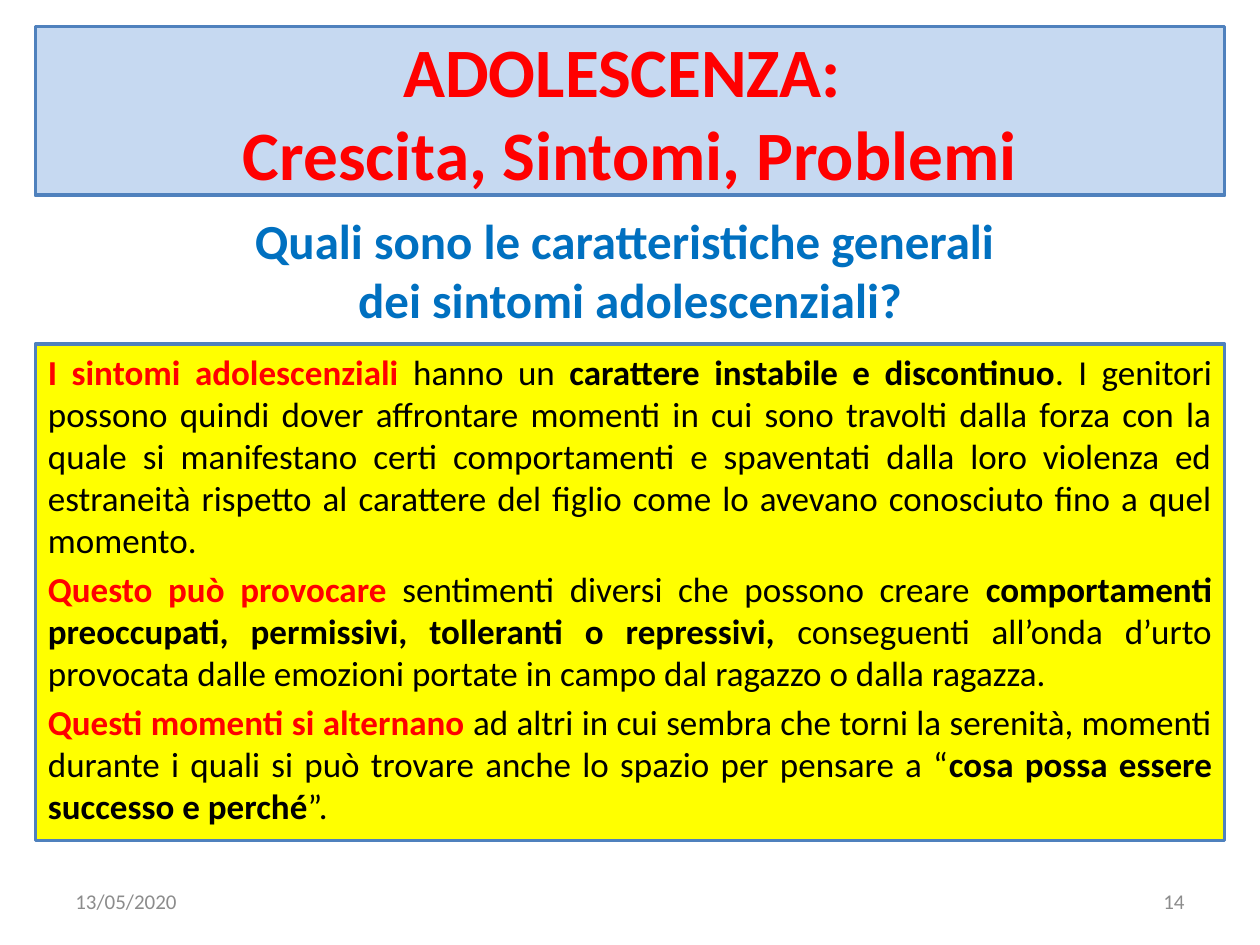
from pptx import Presentation
from pptx.dml.color import RGBColor
from pptx.enum.text import MSO_ANCHOR, MSO_AUTO_SIZE, PP_ALIGN
from pptx.util import Inches, Pt

LEFT, CENTER, RIGHT, JUSTIFY = PP_ALIGN.LEFT, PP_ALIGN.CENTER, PP_ALIGN.RIGHT, PP_ALIGN.JUSTIFY
TOP, MIDDLE = MSO_ANCHOR.TOP, MSO_ANCHOR.MIDDLE

# Content: each paragraph is a list of (style, text) runs
TITLE = [[("title", "ADOLESCENZA: \vCrescita, Sintomi, Problemi")]]
QUESTION = [
    [("question", "Quali sono le caratteristiche generali ")],
    [("question", "dei sintomi adolescenziali?")],
]
ANSWER = [
    [("lead", "I sintomi adolescenziali "),
     ("plain", "hanno un "),
     ("strong", "carattere instabile e discontinuo"),
     ("plain", ". I genitori possono quindi dover affrontare momenti in cui sono travolti "
               "dalla forza con la quale si manifestano certi comportamenti e spaventati "
               "dalla loro violenza ed estraneità rispetto al carattere del figlio come lo "
               "avevano conosciuto fino a quel momento. ")],
    [("lead", "Questo può provocare "),
     ("plain", "sentimenti diversi che possono creare "),
     ("strong", "comportamenti preoccupati, permissivi, tolleranti o repressivi,"),
     ("plain", " conseguenti all’onda d’urto provocata dalle emozioni portate in campo "
               "dal ragazzo o dalla ragazza. ")],
    [("lead", "Questi momenti si alternano "),
     ("plain", "ad altri in cui sembra che torni la serenità, momenti durante i quali si "
               "può trovare anche lo spazio per pensare a “"),
     ("strong", "cosa possa essere successo e perché"),
     ("plain", "”.")],
]
DATE = [[("footer", "13/05/2020")]]
NUMBER = [[("footer", "14")]]

# Theme: run styles are (size, colour, bold)
THEME = {
    "font": "Calibri",
    "border": ("4F81BD", 2),
    "title_fill": "C6D9F1",
    "answer_fill": "FFFF00",
    "styles": {
        "title": (39.6, "FF0000", True),
        "question": (28, "0070C0", True),
        "lead": (20, "FF0000", True),
        "plain": (20, "000000", False),
        "strong": (20, "000000", True),
        "footer": (12, "8C8C8C", False),
    },
}

# Layout in inches: one full-width column, and a footer row inside wider margins
WIDTH, HEIGHT = 10, 7.5
MARGIN, FOOTER_MARGIN = 0.28, 0.5
COLUMN = WIDTH - 2 * MARGIN
FOOTER_TOP, FOOTER_WIDTH, FOOTER_HEIGHT = 6.95, 2.33, 0.4


def place(shape, left, top, width, height):
    box = {"left": left, "top": top, "width": width, "height": height}
    for side, value in box.items():
        setattr(shape, side, Inches(value))


def write(shape, paragraphs, align, anchor, space_before=0):
    frame = shape.text_frame
    settings = {"word_wrap": True, "auto_size": MSO_AUTO_SIZE.NONE, "vertical_anchor": anchor}
    for name, value in settings.items():
        setattr(frame, name, value)
    for index, runs in enumerate(paragraphs):
        paragraph = frame.add_paragraph() if index else frame.paragraphs[0]
        paragraph.alignment = align
        paragraph.space_before = Pt(space_before)
        for style, text in runs:
            size, colour, bold = THEME["styles"][style]
            # A vertical tab marks a line break inside the paragraph
            for part, line in enumerate(text.split("\v")):
                if part:
                    paragraph.add_line_break()
                run = paragraph.add_run()
                run.text = line
                run.font.color.rgb = RGBColor.from_string(colour)
                for name, value in {"name": THEME["font"], "size": Pt(size), "bold": bold}.items():
                    setattr(run.font, name, value)


def panel(shape, fill):
    colour, width = THEME["border"]
    shape.fill.solid()
    shape.fill.fore_color.rgb = RGBColor.from_string(fill)
    shape.line.color.rgb = RGBColor.from_string(colour)
    shape.line.width = Pt(width)


def main():
    deck = Presentation()
    deck.slide_width, deck.slide_height = Inches(WIDTH), Inches(HEIGHT)
    slide = deck.slides.add_slide(deck.slide_layouts[0])
    title, answer = slide.placeholders

    # Framed title and answer
    place(title, MARGIN, 0.21, COLUMN, 1.34)
    panel(title, THEME["title_fill"])
    write(title, TITLE, CENTER, MIDDLE)
    place(answer, MARGIN, 2.73, COLUMN, 3.94)
    panel(answer, THEME["answer_fill"])
    write(answer, ANSWER, JUSTIFY, TOP, space_before=4)

    # Question and footer
    footer_right = WIDTH - FOOTER_MARGIN - FOOTER_WIDTH
    footer_row = (FOOTER_TOP, FOOTER_WIDTH, FOOTER_HEIGHT)
    for paragraphs, box, align, anchor in (
        (DATE, (FOOTER_MARGIN, *footer_row), LEFT, MIDDLE),
        (NUMBER, (footer_right, *footer_row), RIGHT, MIDDLE),
        (QUESTION, (MARGIN, 1.62, COLUMN, 1.04), CENTER, TOP),
    ):
        label = slide.shapes.add_textbox(*map(Inches, box))
        write(label, paragraphs, align, anchor)

    deck.save("out.pptx")


if __name__ == "__main__":
    main()
